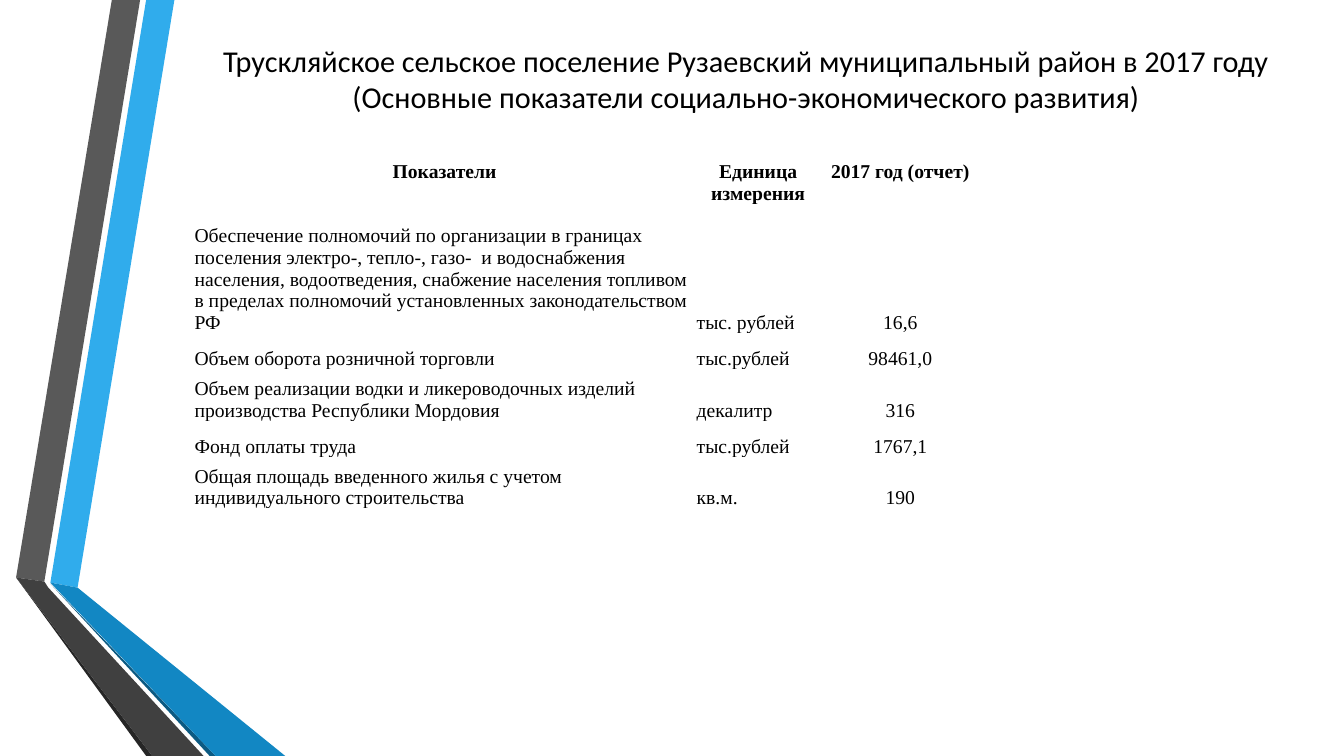
from dataclasses import dataclass

from lxml import etree
from pptx import Presentation
from pptx.dml.color import RGBColor
from pptx.enum import text
from pptx.oxml import ns
from pptx.util import Inches, Pt


@dataclass(frozen=True)
class Theme:
    ink: str = "000000"
    border: str = "FFFFFF"
    title_font: str = "Calibri"
    table_font: str = "Times New Roman"
    title_size: float = 21.6
    table_size: float = 14
    sky: str = "30ACEC"
    blue: str = "1287C3"
    navy: str = "0C5A82"
    grey: str = "595959"
    dark_grey: str = "404040"
    charcoal: str = "262626"


theme = Theme()


def style(paragraph, font_name, size, bold, alignment):
    paragraph.alignment = alignment
    paragraph.font.name = font_name
    paragraph.font.size = Pt(size)
    paragraph.font.bold = bold
    paragraph.font.color.rgb = RGBColor.from_string(theme.ink)


def add_border(cell):
    properties = cell._tc.get_or_add_tcPr()
    for side in ("a:lnL", "a:lnR", "a:lnT", "a:lnB"):
        line = etree.SubElement(properties, ns.qn(side), w=str(Pt(1)))
        fill = etree.SubElement(line, ns.qn("a:solidFill"))
        etree.SubElement(fill, ns.qn("a:srgbClr"), val=theme.border)


presentation = Presentation()
presentation.slide_width = Inches(13.33)
presentation.slide_height = Inches(7.5)
slide = presentation.slides.add_slide(presentation.slide_layouts[5])

# Folded ribbons along the left edge
ribbons = [
    (theme.sky, [(0.5, 5.78), (0.77, 5.83), (1.73, 0), (1.45, 0)]),
    (theme.grey, [(1.39, 0), (1.11, 0), (0.16, 5.73), (0.44, 5.77)]),
    (theme.charcoal, [(0.16, 5.73), (1.45, 7.5), (1.51, 7.5)]),
    (theme.navy, [(0.5, 5.79), (2.08, 7.5), (2.14, 7.5)]),
    (theme.blue, [(0.5, 5.78), (2.14, 7.5), (2.83, 7.5), (0.77, 5.83)]),
    (theme.dark_grey, [(0.16, 5.73), (1.51, 7.5), (2.02, 7.5),
                       (0.48, 5.83), (0.44, 5.77)]),
]
for color, corners in ribbons:
    start, *others = [(Inches(x), Inches(y)) for x, y in corners]
    outline = slide.shapes.build_freeform(*start)
    outline.add_line_segments(others, close=True)
    ribbon = outline.convert_to_shape()
    ribbon.fill.solid()
    ribbon.fill.fore_color.rgb = RGBColor.from_string(color)
    ribbon.line.fill.background()
    ribbon.shadow.inherit = False

# Title
title = slide.shapes.title
title.left, title.top = Inches(1.92), Inches(0.27)
title.width, title.height = Inches(10.96), Inches(1.01)
title.text_frame.text = (
    "Трускляйское сельское поселение Рузаевский муниципальный район в 2017 году\v"
    "(Основные показатели социально-экономического развития)")
title.text_frame.vertical_anchor = text.MSO_ANCHOR.MIDDLE
style(title.text_frame.paragraphs[0], theme.title_font, theme.title_size,
      False, text.PP_ALIGN.CENTER)

# Table of indicators
indicators = [
    ("Показатели", "Единица измерения", "2017 год (отчет)"),
    ("Обеспечение полномочий по организации в границах поселения электро-, "
     "тепло-, газо-  и водоснабжения населения, водоотведения, снабжение "
     "населения топливом в пределах полномочий установленных "
     "законодательством РФ", "тыс. рублей", "16,6"),
    ("Объем оборота розничной торговли", "тыс.рублей", "98461,0"),
    ("Объем реализации водки и ликероводочных изделий производства "
     "Республики Мордовия", "декалитр", "316"),
    ("Фонд оплаты труда", "тыс.рублей", "1767,1"),
    ("Общая площадь введенного жилья с учетом индивидуального строительства",
     "кв.м.", "190"),
]
column_widths = [4.98, 1.24, 1.58]
row_heights = [0.41, 1.28, 0.36, 0.51, 0.36, 0.51]
table = slide.shapes.add_table(
    len(row_heights), len(column_widths), Inches(1.92), Inches(1.59),
    Inches(sum(column_widths)), Inches(sum(row_heights))).table
table.horz_banding = False
for column, width in zip(table.columns, column_widths):
    column.width = Inches(width)

for r, (indicator, height) in enumerate(zip(indicators, row_heights)):
    table.rows[r].height = Inches(height)
    header = r == 0
    for c, wording in enumerate(indicator):
        cell = table.cell(r, c)
        cell.text = wording
        cell.margin_left = cell.margin_right = cell.margin_top = Inches(0.01)
        cell.margin_bottom = 0
        cell.vertical_anchor = (text.MSO_ANCHOR.TOP if header
                                else text.MSO_ANCHOR.BOTTOM)
        centred = header or c == 2
        style(cell.text_frame.paragraphs[0], theme.table_font, theme.table_size,
              header, text.PP_ALIGN.CENTER if centred else text.PP_ALIGN.LEFT)
        add_border(cell)
        cell.fill.background()

presentation.save("out.pptx")
